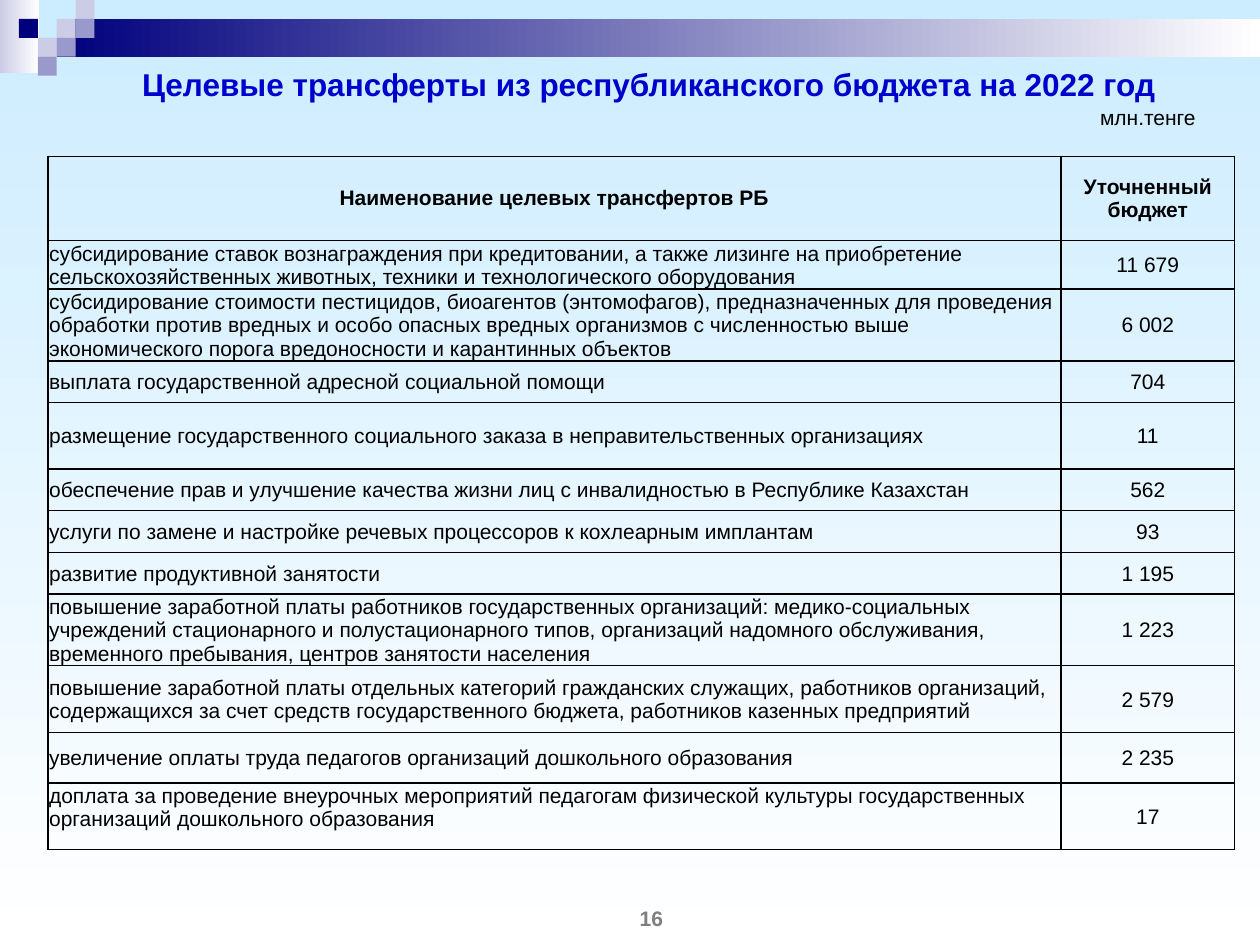
from pptx import Presentation
from pptx.dml.color import RGBColor
from pptx.enum.shapes import MSO_SHAPE as Kind
from pptx.enum.text import MSO_ANCHOR as Anchor, PP_ALIGN as Align
from pptx.oxml import parse_xml
from pptx.oxml.ns import nsdecls
from pptx.util import Inches, Pt

NAVY = RGBColor(0x00, 0x00, 0x7D)
LILAC = RGBColor(0xCC, 0xCC, 0xE6)
VIOLET = RGBColor(0x99, 0x99, 0xCC)
SKY = RGBColor(0xCC, 0xEC, 0xFF)
WHITE = RGBColor(0xFF, 0xFF, 0xFF)
BLUE = RGBColor(0x00, 0x00, 0xCC)
GREY = RGBColor(0x7F, 0x7F, 0x7F)
BLACK = RGBColor(0x00, 0x00, 0x00)

TITLE = "Целевые трансферты из республиканского бюджета на 2022 год"
UNIT = "млн.тенге"
PAGE = "16"
HEAD = ("Наименование целевых трансфертов РБ", "Уточненный бюджет", 0.67)
ITEMS = [
    ("субсидирование ставок вознаграждения при кредитовании, а также лизинге на приобретение "
     "сельскохозяйственных животных, техники и технологического оборудования", "11 679", 0.33),
    ("субсидирование стоимости пестицидов, биоагентов (энтомофагов), предназначенных для проведения "
     "обработки против вредных и особо опасных вредных организмов с численностью выше "
     "экономического порога вредоносности и карантинных объектов", "6 002", 0.33),
    ("выплата государственной адресной социальной помощи", "704", 0.33),
    ("размещение государственного социального заказа в неправительственных организациях", "11", 0.53),
    ("обеспечение прав и улучшение качества жизни лиц с инвалидностью в Республике Казахстан", "562", 0.33),
    ("услуги по замене и настройке речевых процессоров к кохлеарным имплантам", "93", 0.33),
    ("развитие продуктивной занятости", "1 195", 0.33),
    ("повышение заработной платы работников государственных организаций: медико-социальных "
     "учреждений стационарного и полустационарного типов, организаций надомного обслуживания, "
     "временного пребывания, центров занятости населения", "1 223", 0.33),
    ("повышение заработной платы отдельных категорий гражданских служащих, работников организаций, "
     "содержащихся за счет средств государственного бюджета, работников казенных предприятий", "2 579", 0.53),
    ("увеличение оплаты труда педагогов организаций дошкольного образования", "2 235", 0.4),
    ("доплата за проведение внеурочных мероприятий педагогам физической культуры государственных "
     "организаций дошкольного образования", "17", 0.53),
]
COLS = (8.04, 1.38)
STEP = 0.15
BANDS = [((0, 0, 0.31, 0.58), LILAC), ((3 * STEP, STEP, 9.55, 2 * STEP), NAVY)]
TILES = [(3, 1, LILAC), (4, 0, LILAC), (4, 1, VIOLET), (2, 2, LILAC),
         (1, 1, NAVY), (3, 2, VIOLET), (2, 3, VIOLET)]


def blend(fill, start, angle):
    """Fill with a gradient from a colour to white."""
    fill.gradient()
    fill.gradient_angle = angle
    for stop, tint in zip(fill.gradient_stops, (start, WHITE)):
        stop.color.rgb = tint


def block(slide, box):
    """Add a plain rectangle without line or shadow."""
    shape = slide.shapes.add_shape(Kind.RECTANGLE, *map(Inches, box))
    shape.shadow.inherit = False
    shape.line.fill.background()
    return shape


def write(frame, text, size=12, tint=BLACK, bold=False, align=Align.CENTER):
    """Set one formatted paragraph."""
    frame.text = text
    frame.word_wrap = True
    para = frame.paragraphs[0]
    para.alignment = align
    font = para.runs[0].font
    font.name, font.size, font.bold = "Arial", Pt(size), bold
    font.color.rgb = tint
    return para


def label(slide, box, text, **look):
    """Add a centred text box."""
    frame = slide.shapes.add_textbox(*map(Inches, box)).text_frame
    write(frame, text, **look)
    frame.vertical_anchor = Anchor.MIDDLE


def border(cell):
    """Draw thin black lines on all four sides of a cell."""
    props = cell._tc.get_or_add_tcPr()
    for spot, side in enumerate(("lnL", "lnR", "lnT", "lnB")):
        props.insert(spot, parse_xml(
            f'<a:{side} {nsdecls("a")} w="12700"><a:solidFill>'
            f'<a:srgbClr val="{BLACK}"/></a:solidFill></a:{side}>'))


def grid(slide):
    """Build the table of transfers."""
    rows = [HEAD] + ITEMS
    high = sum(row[2] for row in rows)
    table = slide.shapes.add_table(len(rows), len(COLS), *map(Inches, (0.38, 1.24, sum(COLS), high))).table
    table.first_row = table.horz_banding = False
    for col, wide in zip(table.columns, COLS):
        col.width = Inches(wide)
    for r, (name, value, tall) in enumerate(rows):
        table.rows[r].height = Inches(tall)
        for c, text in enumerate((name, value)):
            cell = table.cell(r, c)
            head = r == 0
            align = Align.CENTER if head or c else Align.LEFT
            para = write(cell.text_frame, text, bold=head, align=align)
            if head:
                para.space_before = Pt(2.4)
            else:
                cell.margin_left = cell.margin_right = cell.margin_top = Inches(0.01)
                cell.margin_bottom = 0
            last = r == len(ITEMS) and c == 0
            cell.vertical_anchor = Anchor.TOP if last else Anchor.MIDDLE
            cell.fill.background()
            border(cell)


def main():
    """Build and save the slide."""
    deck = Presentation()
    deck.slide_width, deck.slide_height = Inches(10), Inches(7.5)
    slide = deck.slides.add_slide(deck.slide_layouts[5])
    blend(slide.background.fill, SKY, 270)
    for box, tint in BANDS:
        blend(block(slide, box).fill, tint, 0)
    for col, row, tint in TILES:
        fill = block(slide, (col * STEP, row * STEP, STEP, STEP)).fill
        fill.solid()
        fill.fore_color.rgb = tint
    title = slide.shapes.title
    title.left, title.top, title.width, title.height = map(Inches, (0.38, 0.46, 9.54, 0.42))
    write(title.text_frame, TITLE, size=18, tint=BLUE, bold=True)
    title.text_frame.vertical_anchor = Anchor.MIDDLE
    grid(slide)
    label(slide, (8.42, 0.78, 1.38, 0.3), UNIT)
    label(slide, (4.17, 7.08, 2, 0.42), PAGE, tint=GREY, bold=True)
    deck.save("out.pptx")


if __name__ == "__main__":
    main()
